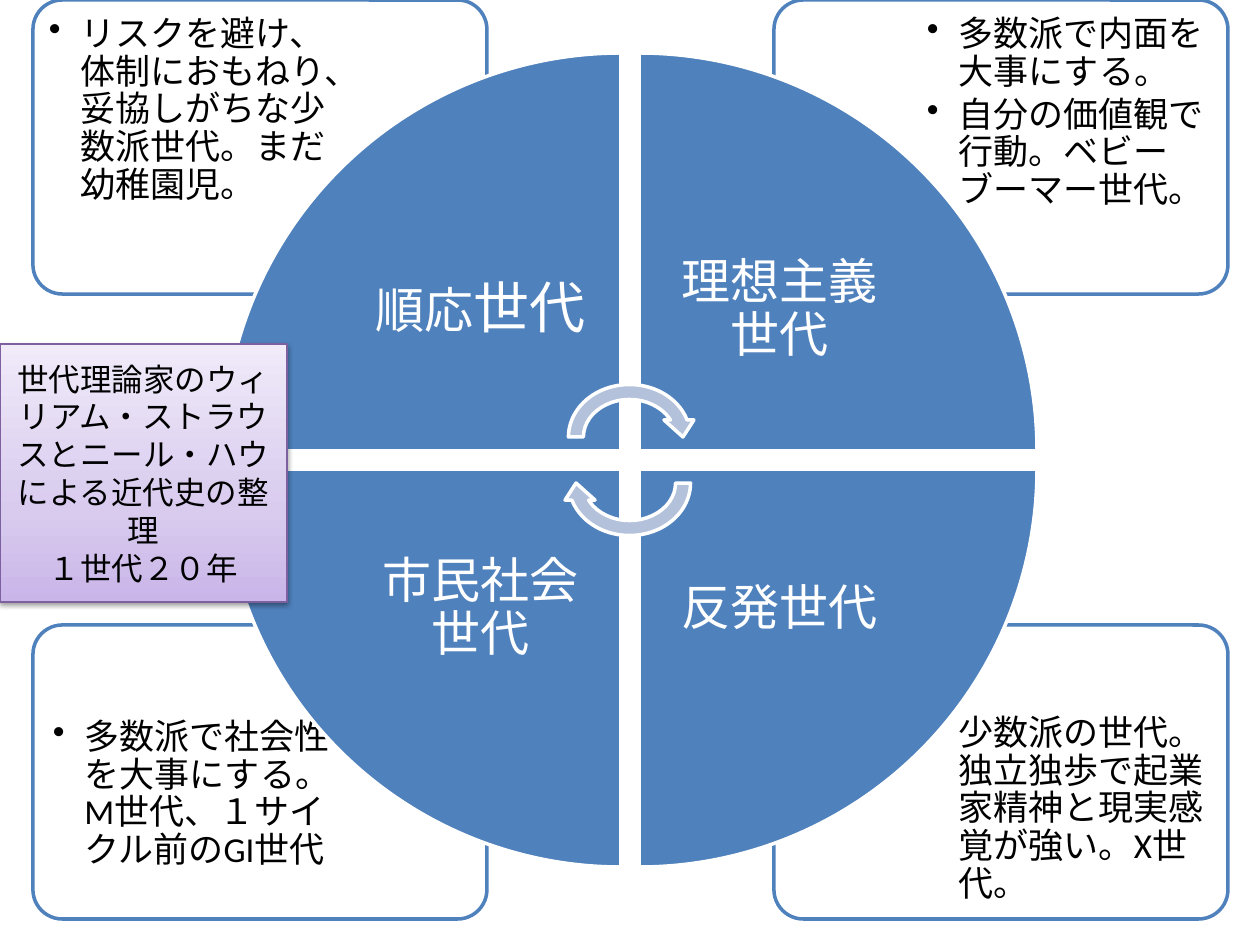
from dataclasses import dataclass

from lxml import etree
from pptx import Presentation
from pptx.dml.color import RGBColor
from pptx.enum.lang import MSO_LANGUAGE_ID
from pptx.enum.shapes import MSO_SHAPE
from pptx.enum.text import MSO_ANCHOR, PP_ALIGN
from pptx.oxml import parse_xml
from pptx.oxml.ns import nsdecls, qn
from pptx.util import Emu, Pt

ROUND_RECT, RECT = MSO_SHAPE.ROUNDED_RECTANGLE, MSO_SHAPE.RECTANGLE
WEDGE, ARROW = MSO_SHAPE.PIE_WEDGE, MSO_SHAPE.CIRCULAR_ARROW
TOP, MIDDLE = MSO_ANCHOR.TOP, MSO_ANCHOR.MIDDLE
CENTER = PP_ALIGN.CENTER
JAPANESE = MSO_LANGUAGE_ID.JAPANESE


@dataclass
class Theme:
    white: str = "FFFFFF"
    text: str = "000000"
    blue: str = "4F81BD"
    arrow: str = "B3C1DB"
    violet: str = "7D60A0"
    gradient: tuple = ((0, "C9B5E8"), (35, "D8CBEE"), (100, "F0EAF9"))
    body_font: str = "Calibri"
    east_font: str = "Noto Sans CJK JP"
    note: int = 18
    body: int = 20
    label: int = 28
    large: int = 32


T = Theme()

# (column, row, inset, paragraphs)
CARDS = [
    (1, 1, 10, ["少数派の世代。独立独歩で起業家精神と現実感覚が強い。X世代。"]),
    (0, 1, 14, ["多数派で社会性を大事にする。M世代、１サイクル前のGI世代"]),
    (1, 0, 10, ["多数派で内面を大事にする。", "自分の価値観で行動。ベビーブーマー世代。"]),
    (0, 0, 10, ["リスクを避け、体制におもねり、妥協しがちな少数派世代。まだ幼稚園児。"]),
]
WEDGES = [
    (0, 0, [("順応", T.label), ("世代", T.large)]),
    (1, 0, [("理想主義世代", T.label)]),
    (1, 1, [("反発世代", T.label)]),
    (0, 1, [("市民社会世代", T.label)]),
]
NOTE = ["世代理論家のウィリアム・ストラウスとニール・ハウによる近代史の整理", "１世代２０年"]

CARD_X, CARD_Y, CARD_W, CARD_H = (33, 774), (0, 625), 454, 294
BODY_W, BODY_H, BODY_GAP = 305, 208, 6
WEDGE_X, WEDGE_Y, WEDGE_SIZE, LABEL_SIZE = (223, 639), (53, 469), 398, 281
ARROW_X, ARROW_Y, ARROW_W, ARROW_H = 561, (377, 423), 137, 120


def px(n):
    return Emu(n * 914400 // 126)


def rgb(color):
    return RGBColor.from_string(color)


def add_shape(kind, x, y, w, h, fill, line, width=2, rotation=0):
    sp = slide.shapes.add_shape(kind, px(x), px(y), px(w), px(h))
    sp.shadow.inherit = False
    sp.rotation = rotation
    sp.fill.solid()
    sp.fill.fore_color.rgb = rgb(fill)
    sp.line.color.rgb = rgb(line)
    sp.line.width = Pt(width)
    return sp


def add_run(p, text, size, color, font):
    r = p.add_run()
    r.text = text
    r.font.size = Pt(size)
    r.font.color.rgb = rgb(color)
    r.font.name = font
    r.font.language_id = JAPANESE
    east = etree.Element(qn("a:ea"), typeface=T.east_font)
    r.font._element.find(qn("a:latin")).addnext(east)


def add_bullet(p):
    pPr = p._p.get_or_add_pPr()
    pPr.set("marL", str(Pt(18)))
    pPr.set("indent", str(-Pt(18)))
    etree.SubElement(pPr, qn("a:buChar"), char="•")


def set_frame(tf, anchor, inset):
    tf.word_wrap = True
    tf.vertical_anchor = anchor
    tf.margin_left = tf.margin_right = px(inset)
    tf.margin_top = tf.margin_bottom = px(inset)


def add_text_box(x, y, w, h, anchor, inset):
    tf = slide.shapes.add_textbox(px(x), px(y), px(w), px(h)).text_frame
    set_frame(tf, anchor, inset)
    return tf


def paragraph(tf, i):
    return tf.add_paragraph() if i else tf.paragraphs[0]


def add_card(col, row, inset, lines):
    x, y = CARD_X[col], CARD_Y[row]
    sp = add_shape(ROUND_RECT, x, y, CARD_W, CARD_H, T.white, T.blue)
    sp.adjustments[0] = 0.1
    color = sp.fill._xPr.find(qn("a:solidFill"))[0]
    etree.SubElement(color, qn("a:alpha"), val="90000")
    body_x = x + (CARD_W - BODY_W - BODY_GAP if col else BODY_GAP)
    body_y = y + (CARD_H - BODY_H - BODY_GAP if row else BODY_GAP)
    tf = add_text_box(body_x, body_y, BODY_W, BODY_H, TOP, inset)
    for i, line in enumerate(lines):
        p = paragraph(tf, i)
        p.level = 1
        add_bullet(p)
        p.line_spacing = 0.9
        p.space_after = Pt(3)
        add_run(p, line, T.body, T.text, T.body_font)


def add_wedge(i, col, row, runs):
    x, y = WEDGE_X[col], WEDGE_Y[row]
    add_shape(WEDGE, x, y, WEDGE_SIZE, WEDGE_SIZE, T.blue, T.white, rotation=90 * i)
    inner = WEDGE_SIZE - LABEL_SIZE
    tf = add_text_box(x + inner * (1 - col), y + inner * (1 - row),
                      LABEL_SIZE, LABEL_SIZE, MIDDLE, 28)
    p = tf.paragraphs[0]
    p.alignment = CENTER
    p.line_spacing = 0.9
    for text, size in runs:
        add_run(p, text, size, T.white, T.east_font)


def add_note():
    sp = add_shape(RECT, 0, 344, 287, 258, T.white, T.violet, 0.75)
    stops = "".join(f'<a:gs pos="{pos * 1000}"><a:srgbClr val="{color}"/></a:gs>'
                    for pos, color in T.gradient)
    gradient = parse_xml(
        f'<a:gradFill {nsdecls("a")} rotWithShape="1"><a:gsLst>{stops}</a:gsLst>'
        '<a:lin ang="16200000" scaled="0"/></a:gradFill>')
    spPr = sp._element.spPr
    spPr.replace(spPr.find(qn("a:solidFill")), gradient)
    spPr.find(qn("a:effectLst")).append(parse_xml(
        f'<a:outerShdw {nsdecls("a")} blurRad="40000" dist="20000" dir="5400000" '
        'rotWithShape="0"><a:srgbClr val="000000"><a:alpha val="38000"/>'
        '</a:srgbClr></a:outerShdw>'))
    tf = sp.text_frame
    tf.word_wrap = True
    tf.vertical_anchor = MIDDLE
    for i, line in enumerate(NOTE):
        p = paragraph(tf, i)
        p.alignment = CENTER
        add_run(p, line, T.note, T.text, T.body_font)


prs = Presentation()
prs.slide_width, prs.slide_height = px(1260), px(945)
slide = prs.slides.add_slide(prs.slide_layouts[6])

for card in CARDS:
    add_card(*card)
for i, wedge in enumerate(WEDGES):
    add_wedge(i, *wedge)
for i, y in enumerate(ARROW_Y):
    add_shape(ARROW, ARROW_X, y, ARROW_W, ARROW_H, T.arrow, T.white, rotation=180 * i)
add_note()

prs.save("out.pptx")
